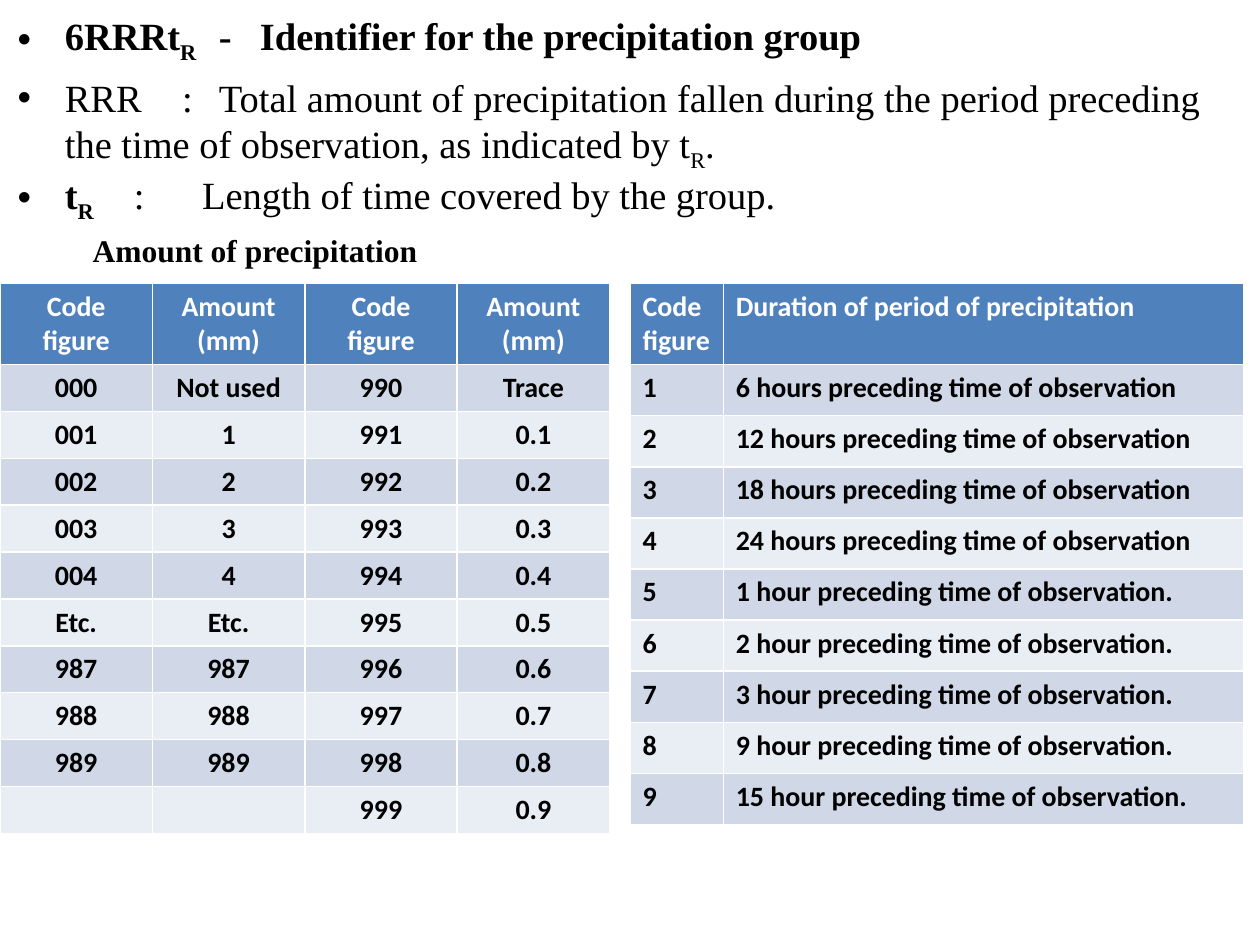
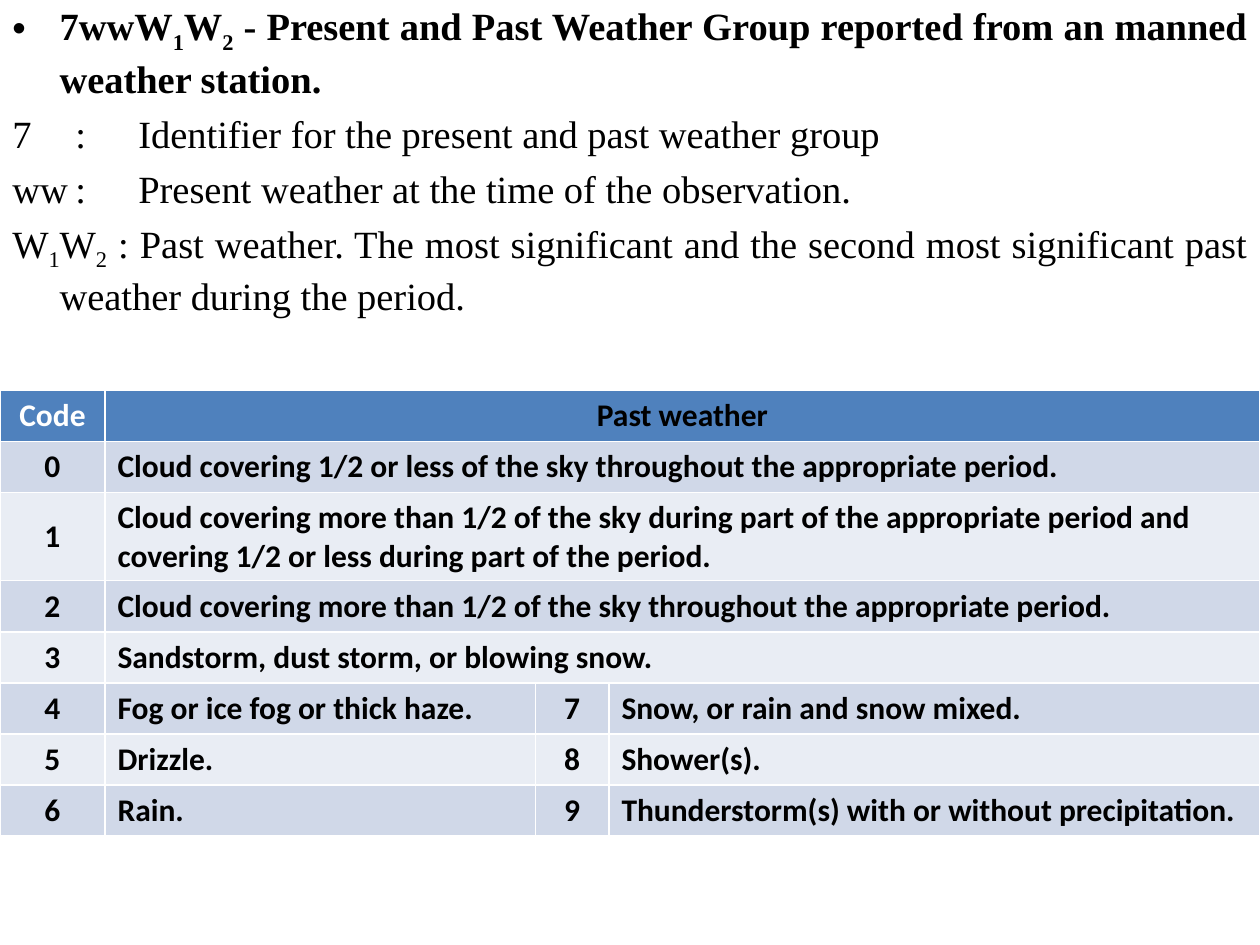
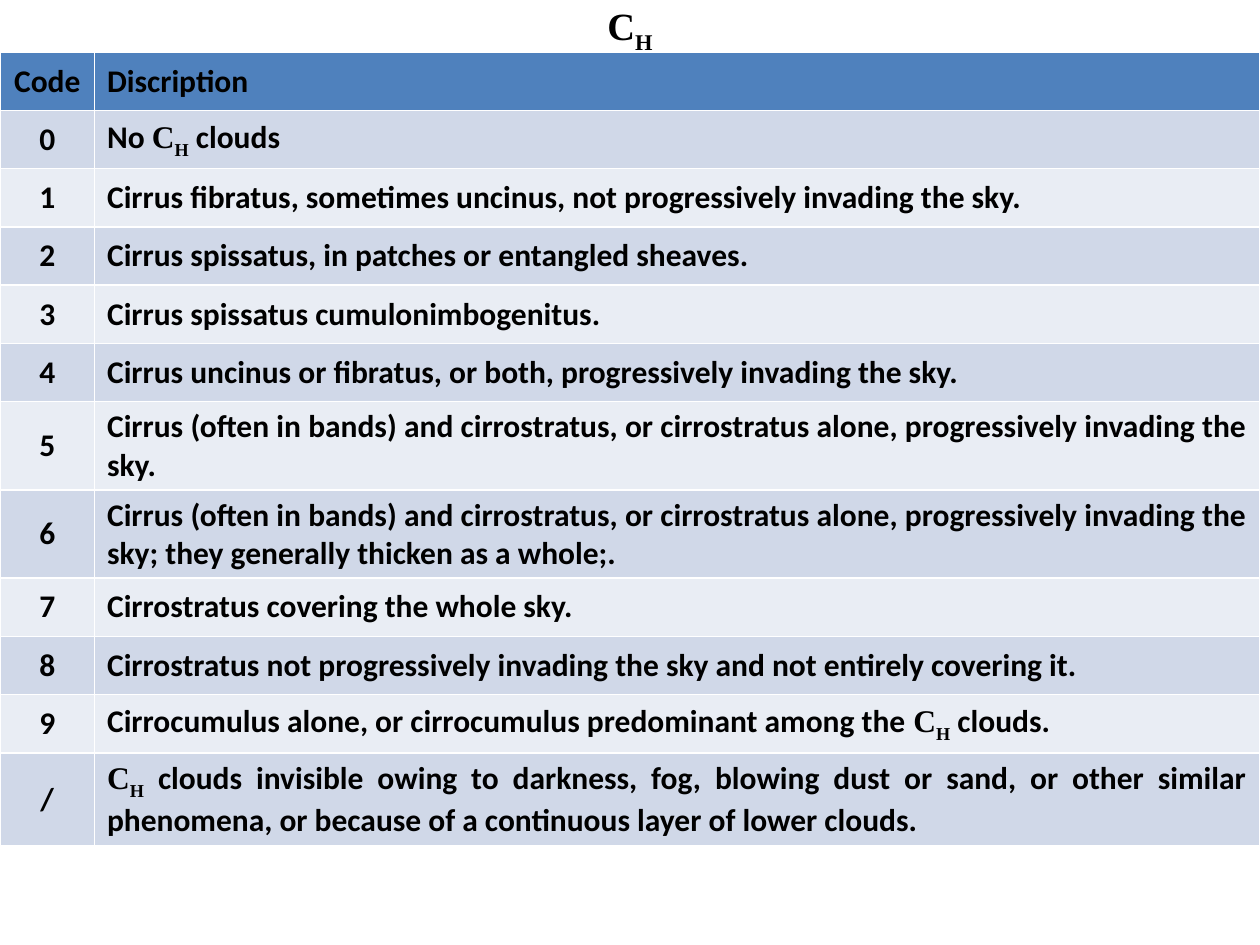
from lxml import etree
from pptx import Presentation
from pptx.dml.color import RGBColor
from pptx.enum.text import MSO_ANCHOR, PP_ALIGN
from pptx.oxml.ns import qn
from pptx.util import Pt

LEFT, CENTER, JUSTIFY = PP_ALIGN.LEFT, PP_ALIGN.CENTER, PP_ALIGN.JUSTIFY
TOP, MIDDLE = MSO_ANCHOR.TOP, MSO_ANCHOR.MIDDLE

SERIF, SANS = "Times New Roman", "Calibri"
BLACK, WHITE = "000000", "FFFFFF"
HEADER_FILL = "4F81BD"
BAND_FILLS = ["D0D8E8", "E9EDF4"]
HANGING = 27
PARAGRAPH_GAP = 5

HIGH_CLOUD = ("C_H_", {"name": SERIF})
BOLD = {"bold": True}


def write(paragraph, spans, size, color, name, bold):
    """Write text or (text, font changes) spans; underscores enclose subscripts."""
    font = paragraph.font
    font.size, font.name, font.bold = Pt(size), name, bold
    font.color.rgb = RGBColor.from_string(color)
    if isinstance(spans, str):
        spans = [(spans, {})]
    for text, changes in spans:
        for index, piece in enumerate(text.split("_")):
            if not piece:
                continue
            run = paragraph.add_run()
            run.text = piece
            for attribute, value in changes.items():
                setattr(run.font, attribute, value)
            if index % 2:
                run._r.get_or_add_rPr().set("baseline", "-25000")


presentation = Presentation()
presentation.slide_width, presentation.slide_height = Pt(720), Pt(540)
precipitation, weather, clouds = [
    presentation.slides.add_slide(presentation.slide_layouts[6]) for _ in range(3)
]

# Tables
amount_rows = [("Code figure", "Amount (mm)") * 2]
amount_codes = ["000", "001", "002", "003", "004", "Etc.", "987", "988", "989", ""]
amounts = ["Not used", "1", "2", "3", "4", "Etc.", "987", "988", "989", ""]
for tenth, (code, amount) in enumerate(zip(amount_codes, amounts)):
    fraction = f"0.{tenth}" if tenth else "Trace"
    amount_rows.append((code, amount, str(990 + tenth), fraction))

duration_rows = [("Code figure", "Duration of period of precipitation")]
durations = ["6 hours", "12 hours", "18 hours", "24 hours",
             "1 hour", "2 hour", "3 hour", "9 hour", "15 hour"]
for code, duration in enumerate(durations, 1):
    stop = "" if code <= 4 else "."
    duration_rows.append(
        (str(code), f"{duration} preceding time of observation{stop}"))

# A row with fewer cells than columns merges its last cell to the right edge.
weather_rows = [
    ("Code", "Past weather"),
    ("0", "Cloud covering 1/2 or less of the sky throughout the appropriate period."),
    ("1", "Cloud covering more than 1/2 of the sky during part of the appropriate "
          "period and\ncovering 1/2 or less during part of the period."),
    ("2", "Cloud covering more than 1/2 of the sky throughout the appropriate period."),
    ("3", "Sandstorm, dust storm, or blowing snow."),
    ("4", "Fog or ice fog or thick haze.", "7", "Snow, or rain and snow mixed."),
    ("5", "Drizzle.", "8", "Shower(s)."),
    ("6", "Rain.", "9", "Thunderstorm(s) with or without precipitation."),
]

cloud_rows = [
    ("Code", "Discription"),
    ("0", [("No ", {}), HIGH_CLOUD, (" clouds", {})]),
    ("1", "Cirrus fibratus, sometimes uncinus, not progressively invading the sky."),
    ("2", "Cirrus spissatus, in patches or entangled sheaves."),
    ("3", "Cirrus spissatus cumulonimbogenitus."),
    ("4", "Cirrus uncinus or fibratus, or both, progressively invading the sky."),
    ("5", "Cirrus (often in bands) and cirrostratus, or cirrostratus alone, "
          "progressively invading the sky."),
    ("6", "Cirrus (often in bands) and cirrostratus, or cirrostratus alone, "
          "progressively invading the sky; they generally thicken as a whole;."),
    ("7", "Cirrostratus covering the whole sky."),
    ("8", "Cirrostratus not progressively invading the sky and not entirely covering it."),
    ("9", [("Cirrocumulus alone, or cirrocumulus predominant among the ", {}),
           HIGH_CLOUD, (" clouds.", {})]),
    ("/", [HIGH_CLOUD,
           (" clouds invisible owing to darkness, fog, blowing dust or sand, or other "
            "similar phenomena, or because of a continuous layer of lower clouds.", {})]),
]

# slide, left, top, rows, column widths, row height, taller rows, text size,
# anchor, column alignments, header alignments, header colours
tables = [
    (precipitation, 0, 162, amount_rows, [87.1] * 4, 24, {}, 16,
     MIDDLE, [CENTER] * 4, [CENTER] * 4, [WHITE] * 4),
    (precipitation, 360, 162, duration_rows, [53.3, 297.3], 29.2, {}, 16,
     TOP, [LEFT] * 2, [LEFT] * 2, [WHITE] * 2),
    (weather, 0, 223, weather_rows, [60, 246, 42, 372], 29.2, {}, 18,
     MIDDLE, [CENTER, LEFT] * 2, [CENTER] * 2, [WHITE, BLACK]),
    (clouds, 0, 29.8, cloud_rows, [54, 666], 33.3, {6: 48.2, 7: 48.2, 11: 48.2}, 18,
     MIDDLE, [CENTER, JUSTIFY], [CENTER, JUSTIFY], [BLACK] * 2),
]
for (slide, left, top, rows, widths, row_height, tall_rows, size,
     anchor, alignments, header_alignments, header_colors) in tables:
    heights = [tall_rows.get(index, row_height) for index in range(len(rows))]
    table = slide.shapes.add_table(
        len(rows), len(widths), Pt(left), Pt(top), Pt(sum(widths)), Pt(sum(heights))
    ).table
    for column, width in zip(table.columns, widths):
        column.width = Pt(width)
    for row_index, (row, height) in enumerate(zip(rows, heights)):
        table.rows[row_index].height = Pt(height)
        fill = BAND_FILLS[(row_index - 1) % 2] if row_index else HEADER_FILL
        for cell in table.rows[row_index].cells:
            cell.fill.solid()
            cell.fill.fore_color.rgb = RGBColor.from_string(fill)
        if len(row) < len(widths):
            table.cell(row_index, len(row) - 1).merge(
                table.cell(row_index, len(widths) - 1))
        for column_index, content in enumerate(row):
            cell = table.cell(row_index, column_index)
            cell.vertical_anchor = anchor
            color, alignment = BLACK, alignments[column_index]
            if row_index == 0:
                color = header_colors[column_index]
                alignment = header_alignments[column_index]
            lines = content.split("\n") if isinstance(content, str) else [content]
            for line_index, line in enumerate(lines):
                frame = cell.text_frame
                paragraph = frame.add_paragraph() if line_index else frame.paragraphs[0]
                paragraph.alignment = alignment
                write(paragraph, line, size, color, SANS, True)

# Text boxes: slide, left, top, width, height, wrap, alignment, size, lines;
# each line holds spans, bold, bullet, hanging indent and tab stops.
text_boxes = [
    (precipitation, 3, 3.6, 720, 90.7, True, LEFT, 22, [
        ("6RRRt_R_\t-\tIdentifier for the precipitation group",
         True, True, HANGING, [115, 138.5]),
        ("RRR\t:\tTotal amount of precipitation fallen during the period preceding "
         "the time of observation, as indicated by t_R_.",
         False, True, HANGING, [94, 115]),
    ]),
    (precipitation, 3, 94.3, 720, 33.8, True, LEFT, 22, [
        ([("t_R_", BOLD), ("\t:\tLength of time covered by the group.", {})],
         False, True, HANGING, [66.5, 105.5]),
    ]),
    (precipitation, 44.6, 128.2, 202.3, 28.8, False, CENTER, 18, [
        ("Amount of precipitation", True, False, 0, []),
    ]),
    (weather, 0, -2.2, 720, 480, True, JUSTIFY, 22, [
        ("7wwW_1_W_2_ - Present and Past Weather Group reported from an manned "
         "weather station.", True, True, HANGING, []),
        ("7\t:\tIdentifier for the present and past weather group",
         False, False, 0, [83, 110]),
        ("ww\t:\tPresent weather at the time of the observation.",
         False, False, 0, [82, 109]),
        ("W_1_W_2_ : Past weather. The most significant and the second most "
         "significant past weather during the period.", False, False, HANGING, []),
    ]),
    (clouds, 0, -2.2, 720, 33.8, True, CENTER, 22, [
        ("C_H_", True, False, 0, []),
    ]),
]
for slide, left, top, width, height, wrap, alignment, size, lines in text_boxes:
    frame = slide.shapes.add_textbox(Pt(left), Pt(top), Pt(width), Pt(height)).text_frame
    frame.word_wrap = wrap
    for index, (spans, bold, bullet, hanging, stops) in enumerate(lines):
        paragraph = frame.add_paragraph() if index else frame.paragraphs[0]
        paragraph.alignment = alignment
        if index:
            paragraph.space_before = Pt(PARAGRAPH_GAP)
        properties = paragraph._p.get_or_add_pPr()
        properties.set("marL", str(Pt(hanging)))
        properties.set("indent", str(-Pt(hanging)))
        if bullet:
            etree.SubElement(properties, qn("a:buFont"), typeface="Arial")
            etree.SubElement(properties, qn("a:buChar"), char="•")
        if stops:
            tab_list = etree.SubElement(properties, qn("a:tabLst"))
            for stop in stops:
                etree.SubElement(tab_list, qn("a:tab"), pos=str(Pt(stop)), algn="l")
        write(paragraph, spans, size, BLACK, SERIF, bold)

presentation.save("out.pptx")
